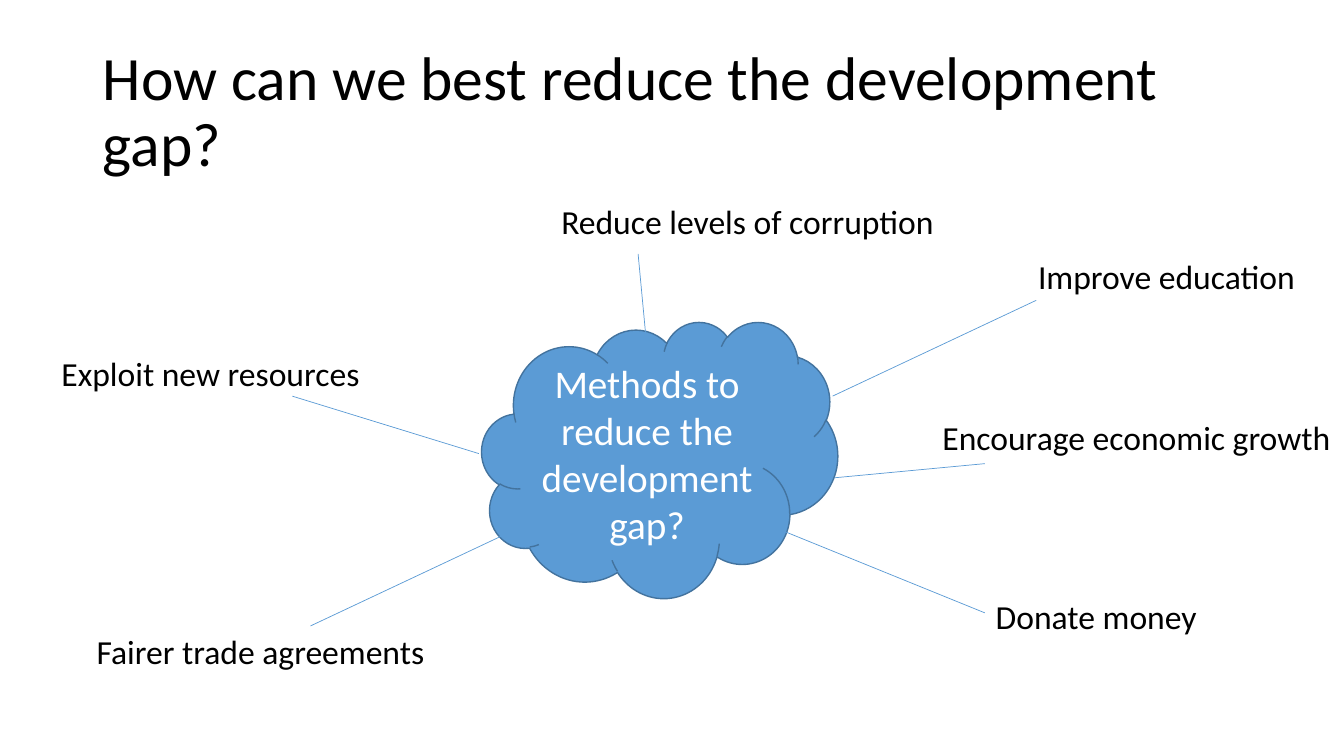
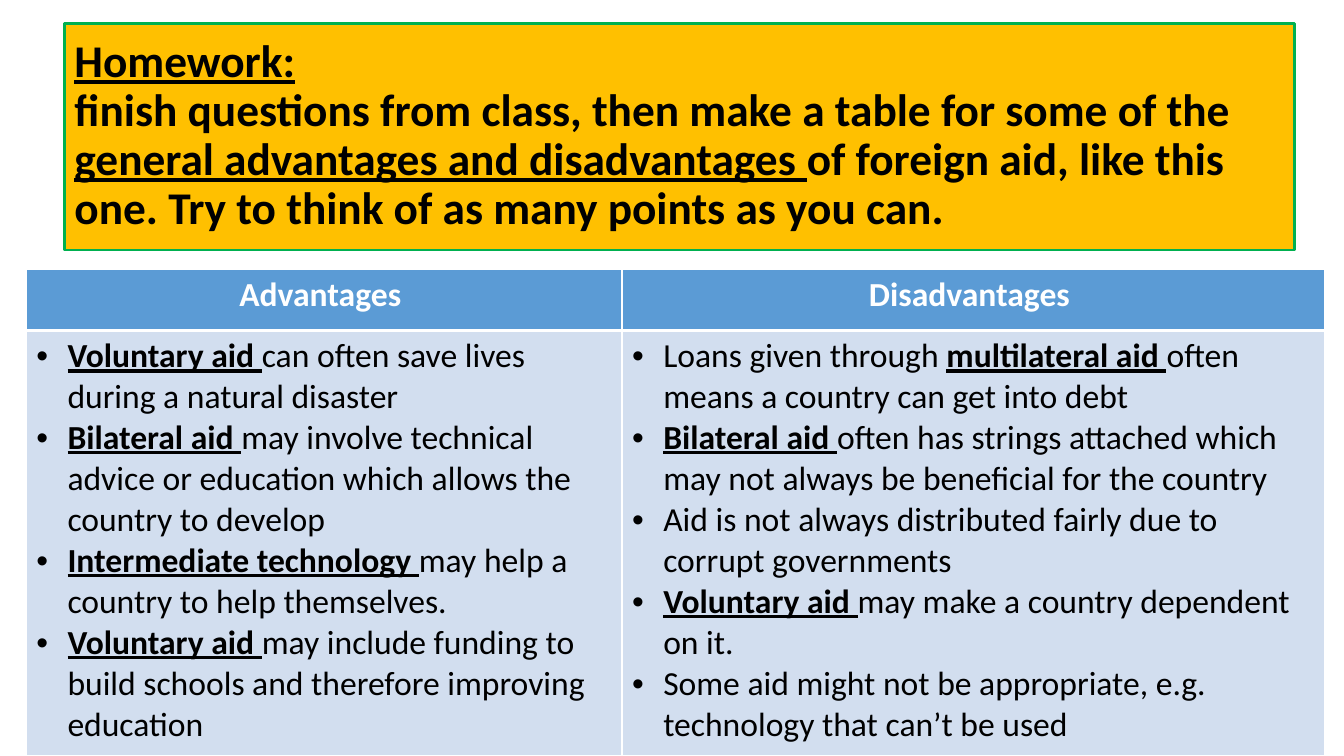
from lxml.etree import SubElement
from pptx import Presentation
from pptx.dml.color import RGBColor as RGB
from pptx.enum.shapes import MSO_CONNECTOR as LINK, MSO_SHAPE as SHAPE
from pptx.enum.text import MSO_ANCHOR as ANCHOR, MSO_AUTO_SIZE as FIT, PP_ALIGN as ALIGN
from pptx.oxml.ns import qn
from pptx.util import Inches, Pt

COLOURS = {key: RGB.from_string(value) for key, value in {
    "text": "000000", "light": "FFFFFF", "blue": "5B9BD5", "outline": "43739E",
    "pale": "D2DEEF", "amber": "FFC000", "green": "00B050"}.items()}
FONT = "Calibri"
TITLE_SPACING = 0.9

deck = Presentation()
deck.slide_width, deck.slide_height = Inches(13.333), Inches(7.5)
blank = deck.slide_layouts[6]


def share(*percents):
    """Turn x, y, x, y... percentages of the slide into lengths."""
    sides = (deck.slide_width, deck.slide_height)
    return [int(sides[i % 2] * percent / 100) for i, percent in enumerate(percents)]


def write(paragraph, text, size, colour="text", bold=False):
    """Add runs; the parts between underscores are bold and underlined."""
    for i, part in enumerate(text.split("_")):
        if part:
            run = paragraph.add_run()
            run.text = part
            run.font.name, run.font.size = FONT, Pt(size)
            run.font.color.rgb = COLOURS[colour]
            run.font.bold = bold or i % 2 == 1
            run.font.underline = i % 2 == 1


# Slide 1: mind map
mind_map = deck.slides.add_slide(blank)
question = mind_map.shapes.add_textbox(*share(6.9, 5.33, 86.25, 19.33)).text_frame
question.word_wrap, question.vertical_anchor = True, ANCHOR.MIDDLE
question.paragraphs[0].line_spacing = TITLE_SPACING
write(question.paragraphs[0], "How can we best reduce the development gap?", 44)

cloud = mind_map.shapes.add_shape(SHAPE.CLOUD, *share(35.85, 42.53, 26.48, 36.53))
homework_slide = deck.slides.add_slide(blank)
homework = homework_slide.shapes.add_shape(SHAPE.RECTANGLE, *share(4.8, 3.07, 91.5, 30))
for panel, fill, outline, width, align in (
        (cloud, "blue", "outline", 1, ALIGN.CENTER),
        (homework, "amber", "green", 2, ALIGN.LEFT)):
    panel.shadow.inherit = False
    panel.fill.solid()
    panel.fill.fore_color.rgb = COLOURS[fill]
    panel.line.color.rgb = COLOURS[outline]
    panel.line.width = Pt(width)
    panel.text_frame.word_wrap = True
    panel.text_frame.vertical_anchor = ANCHOR.MIDDLE
    panel.text_frame.paragraphs[0].alignment = align
write(cloud.text_frame.paragraphs[0], "Methods to reduce the development gap?", 28, "light")

# Method, label left, top and width, then the branch from the cloud to the label
METHODS = (
    ("Improve education", (76.5, 33.2, 20.85), (61.95, 52.4, 77.1, 39.73)),
    ("Encourage economic growth", (69.38, 54.53, 30.6), (62.1, 63.2, 73.28, 61.33)),
    ("Donate money", (73.35, 78.13, 17.18), (58.13, 70.13, 73.28, 81.07)),
    ("Reduce levels of corruption", (41.03, 25.87, 29.48), (48.08, 44.93, 47.48, 33.6)),
    ("Exploit new resources", (3.83, 46, 24.45), (35.63, 60, 21.75, 52.4)),
    ("Fairer trade agreements", (6.45, 82.8, 26.18), (38.25, 70.13, 23.1, 82.8)),
)
LABEL_HEIGHT = 6.67
for method, place, ends in METHODS:
    branch = mind_map.shapes.add_connector(LINK.STRAIGHT, *share(*ends))
    branch.line.color.rgb = COLOURS["blue"]
    branch.line.width = Pt(0.5)
    SubElement(branch._element.spPr, qn("a:effectLst"))
    label = mind_map.shapes.add_textbox(*share(*place, LABEL_HEIGHT)).text_frame
    label.word_wrap, label.auto_size = False, FIT.SHAPE_TO_FIT_TEXT
    write(label.paragraphs[0], method, 24)

# Slide 2: homework task and table
task = homework.text_frame.paragraphs[0]
task.line_spacing = TITLE_SPACING
write(task, "_Homework:_", 32.4, bold=True)
task.add_line_break()
write(task, "finish questions from class, then make a table for some of the "
            "_general advantages and disadvantages _of foreign aid, like this one. "
            "Try to think of as many points as you can.", 32.4, bold=True)

POINTS = {
    "Advantages ": (
        "_Voluntary aid _can often save lives during a natural disaster",
        "_Bilateral aid _may involve technical advice or education which allows "
        "the country to develop",
        "_Intermediate technology _may help a country to help themselves.",
        "_Voluntary aid _may include funding to build schools and therefore "
        "improving education"),
    "Disadvantages ": (
        "Loans given through _multilateral aid _often means a country can get into debt",
        "_Bilateral aid _often has strings attached which may not always be beneficial "
        "for the country",
        "Aid is not always distributed fairly due to corrupt governments",
        "_Voluntary aid _may make a country dependent on it.",
        "Some aid might not be appropriate, e.g. technology that can’t be used"),
}
TABLE_LEFT, TABLE_TOP = 1.95, 35.6
COLUMN_WIDTHS = (44.33, 52.28)
HEAD_HEIGHT = 8.13
ROW_HEIGHTS = (HEAD_HEIGHT, 100 - TABLE_TOP - HEAD_HEIGHT)
aid = homework_slide.shapes.add_table(2, 2, *share(
    TABLE_LEFT, TABLE_TOP, sum(COLUMN_WIDTHS), sum(ROW_HEIGHTS))).table
for column, width in zip(aid.columns, COLUMN_WIDTHS):
    column.width = share(width)[0]
for row, height in zip(aid.rows, ROW_HEIGHTS):
    row.height = share(0, height)[1]

for c, (heading, points) in enumerate(POINTS.items()):
    head, body = aid.cell(0, c), aid.cell(1, c)
    for cell, fill, thick_side in ((head, "blue", "lnB"), (body, "pale", "lnT")):
        properties = cell._tc.get_or_add_tcPr()
        for side in ("lnL", "lnR", "lnT", "lnB"):
            border = SubElement(properties, qn(f"a:{side}"),
                                w=str(Pt(3 if side == thick_side else 1)))
            paint = SubElement(border, qn("a:solidFill"))
            SubElement(paint, qn("a:srgbClr"), val=str(COLOURS["light"]))
        cell.fill.solid()
        cell.fill.fore_color.rgb = COLOURS[fill]

    head.text_frame.paragraphs[0].alignment = ALIGN.CENTER
    write(head.text_frame.paragraphs[0], heading, 24, "light", bold=True)
    for i, point in enumerate(points):
        item = body.text_frame.add_paragraph() if i else body.text_frame.paragraphs[0]
        layout = item._p.get_or_add_pPr()
        layout.set("marL", str(Inches(0.31)))
        layout.set("indent", str(-Inches(0.31)))
        SubElement(layout, qn("a:buFont"), typeface="Arial")
        SubElement(layout, qn("a:buChar"), char="•")
        write(item, point, 24)

deck.save("out.pptx")
